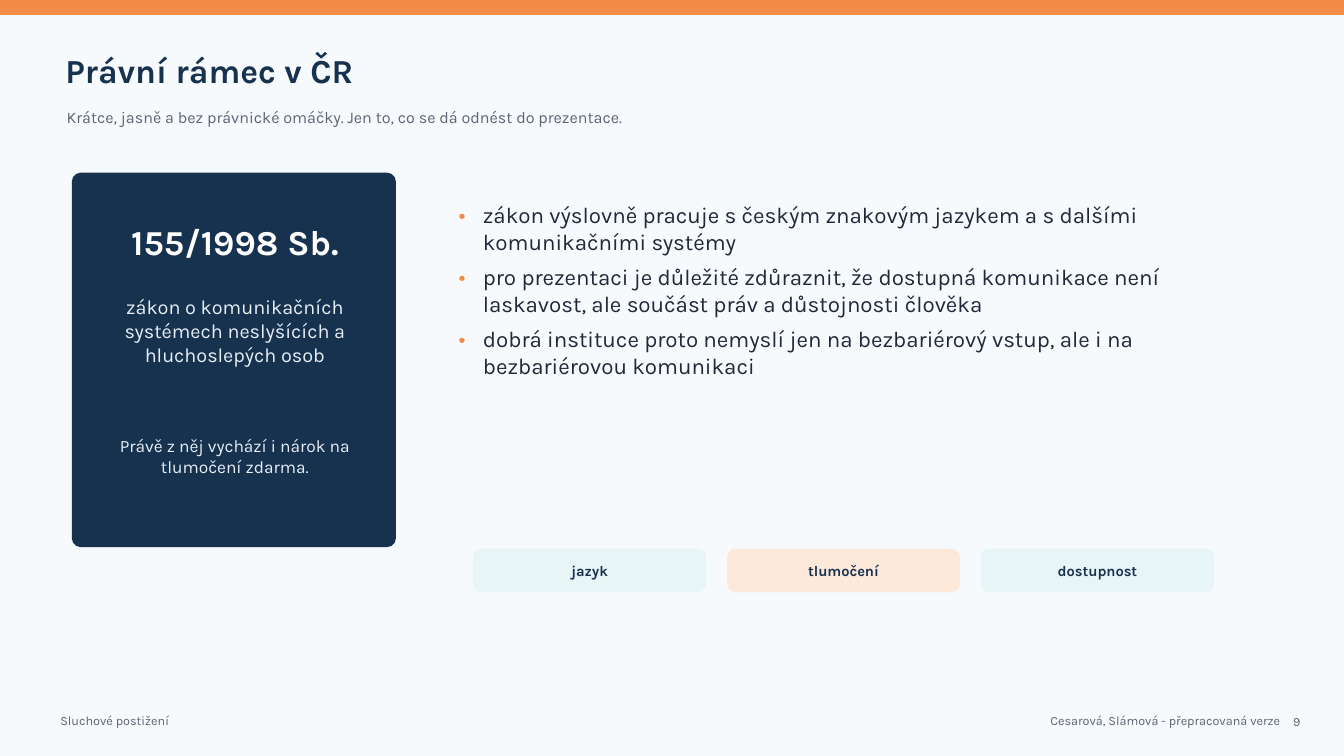
import pptx
import pptx.dml.color
import pptx.enum.shapes
import pptx.enum.text
import pptx.oxml
import pptx.oxml.ns
import pptx.util

Cm = pptx.util.Cm
SHAPES = pptx.enum.shapes.MSO_SHAPE
ALIGN = pptx.enum.text.PP_ALIGN
ANCHOR = pptx.enum.text.MSO_ANCHOR

NAVY, ORANGE, GREY, PALE = "16324F", "F28C45", "5B6573", "E8EEF5"
MINT, PEACH, INK, WHITE = "E8F5F7", "FDE9DA", "1F2937", "FFFFFF"
TITLE = {"size": 24, "bold": True, "color": NAVY}
SUBTITLE = {"size": 11.5, "color": GREY}
FOOTER = {"size": 9, "color": GREY}
LAW = {"size": 25, "bold": True, "color": WHITE}
LAW_NAME = {"size": 14.2, "color": PALE}
LAW_NOTE = {"size": 12.4, "color": PALE}
POINT = {"size": 16, "color": INK}
CHIP = {"size": 10.5, "bold": True, "color": NAVY}


def rgb(value):
    """Turn a hex string into a colour."""
    return pptx.dml.color.RGBColor.from_string(value)


def format_font(font, style):
    """Apply a dict of format values to a font."""
    values = {"name": "Karla", "bold": False, **style}
    values["size"] = pptx.util.Pt(values["size"])
    font.color.rgb = rgb(values.pop("color"))
    for name, value in values.items():
        setattr(font, name, value)


def write_text(shape, lines, style, align=ALIGN.LEFT, anchor=ANCHOR.MIDDLE):
    """Fill a shape with formatted paragraphs and return them."""
    frame = shape.text_frame
    settings = {"text": "\n".join(lines), "word_wrap": True, "vertical_anchor": anchor,
                "auto_size": pptx.enum.text.MSO_AUTO_SIZE.NONE, "margin_left": 0,
                "margin_top": 0, "margin_right": 0, "margin_bottom": 0}
    for name, value in settings.items():
        setattr(frame, name, value)
    for paragraph in frame.paragraphs:
        paragraph.alignment = align
        format_font(paragraph.font, style)
    return frame.paragraphs


def add_text(slide, box, text, style, align=ALIGN.LEFT):
    """Add a one-paragraph text box."""
    shape = slide.shapes.add_textbox(*map(Cm, box))
    write_text(shape, [text], style, align)


def add_panel(slide, box, color, corner=None):
    """Add a plain rectangle, rounded when a corner ratio is given."""
    kind = SHAPES.RECTANGLE if corner is None else SHAPES.ROUNDED_RECTANGLE
    shape = slide.shapes.add_shape(kind, *map(Cm, box))
    if corner is not None:
        shape.adjustments[0] = corner
    shape.shadow.inherit = False
    shape.fill.solid()
    shape.fill.fore_color.rgb = rgb(color)
    shape.line.color.rgb = rgb(color)
    shape.line.width = pptx.util.Pt(1)
    return shape


def add_header(slide, box, title, subtitle):
    """Place the title and the subtitle below it."""
    left, top, width, height = box
    placeholder = slide.shapes.title
    geometry = {"left": left, "top": top, "width": width, "height": 1.4}
    for name, value in geometry.items():
        setattr(placeholder, name, Cm(value))
    write_text(placeholder, [title], TITLE)
    add_text(slide, (left + 0.03, top + 1.42, width, height - 1.42), subtitle, SUBTITLE)


def add_law_card(slide, box, law, name, note):
    """Place the dark card with three centred texts."""
    left, top, width, height = box
    add_panel(slide, box, NAVY, 0.025)
    parts = [(law, LAW, 1.17, 1.07), (name, LAW_NAME, 2.69, 2.54), (note, LAW_NOTE, 6.43, 1.4)]
    for text, style, offset, part_height in parts:
        part_box = (left + 0.79, top + offset, width - 1.53, part_height)
        add_text(slide, part_box, text, style, ALIGN.CENTER)


def add_bullets(slide, box, points):
    """Place the bulleted list."""
    shape = slide.shapes.add_textbox(*map(Cm, box))
    namespace = pptx.oxml.ns.nsdecls("a")
    bullet = [f'<a:buClr {namespace}><a:srgbClr val="{ORANGE}"/></a:buClr>',
              f'<a:buSzPct {namespace} val="112000"/>',
              f'<a:buFont {namespace} typeface="Karla"/>',
              f'<a:buChar {namespace} char="•"/>']
    shape.text_frame.text = "\n".join(points)
    for index, paragraph in enumerate(write_text(shape, points, POINT, anchor=ANCHOR.TOP)):
        properties = paragraph._p.get_or_add_pPr()
        properties.set("marL", str(Cm(0.61)))
        properties.set("indent", str(-Cm(0.61)))
        for position, element in enumerate(bullet):
            properties.insert(position, pptx.oxml.parse_xml(element))
        if index:
            paragraph.space_before = pptx.util.Pt(5.8)


def add_chips(slide, box, chips, gap=0.56):
    """Share the width of the box among labelled chips."""
    left, top, width, height = box
    chip_width = (width - gap * (len(chips) - 1)) / len(chips)
    for index, (label, color) in enumerate(chips):
        chip_box = (left + index * (chip_width + gap), top, chip_width, height)
        write_text(add_panel(slide, chip_box, color, 0.19), [label], CHIP, ALIGN.CENTER)


def add_footer(slide, box, topic, authors, number):
    """Place the topic, the authors and the page number."""
    left, top, width, height = box
    add_text(slide, (left, top, 11.18, height), topic, FOOTER)
    add_text(slide, (left + width - 11.69, top, 11.18, height), authors, FOOTER, ALIGN.RIGHT)
    add_text(slide, (left + width - 0.5, top + 0.03, 0.5, height), number, FOOTER, ALIGN.RIGHT)


def main():
    """Build and save the slide."""
    presentation = pptx.Presentation()
    presentation.slide_width, presentation.slide_height = Cm(33.87), Cm(19.05)
    slide = presentation.slides.add_slide(presentation.slide_layouts[5])
    slide.background.fill.solid()
    slide.background.fill.fore_color.rgb = rgb("F7FAFC")
    add_panel(slide, (0, 0, 33.87, 0.36), ORANGE)
    add_header(slide, (1.65, 1.07, 27.4, 2.33), "Právní rámec v ČR",
               "Krátce, jasně a bez právnické omáčky. Jen to, co se dá odnést do prezentace.")
    add_law_card(slide, (1.83, 4.37, 8.13, 9.4), "155/1998 Sb.",
                 "zákon o komunikačních systémech neslyšících a hluchoslepých osob",
                 "Právě z něj vychází i nárok na tlumočení zdarma.")
    add_bullets(slide, (11.56, 5.08, 18.92, 4.5), [
        "zákon výslovně pracuje s českým znakovým jazykem a s dalšími komunikačními systémy",
        "pro prezentaci je důležité zdůraznit, že dostupná komunikace není laskavost, "
        "ale součást práv a důstojnosti člověka",
        "dobrá instituce proto nemyslí jen na bezbariérový vstup, "
        "ale i na bezbariérovou komunikaci"])
    add_chips(slide, (11.94, 13.84, 18.64, 1.07),
              [("jazyk", MINT), ("tlumočení", PEACH), ("dostupnost", MINT)])
    add_footer(slide, (1.52, 17.88, 31.25, 0.56), "Sluchové postižení",
               "Cesarová, Slámová - přepracovaná verze", "9")
    presentation.save("out.pptx")


if __name__ == "__main__":
    main()
